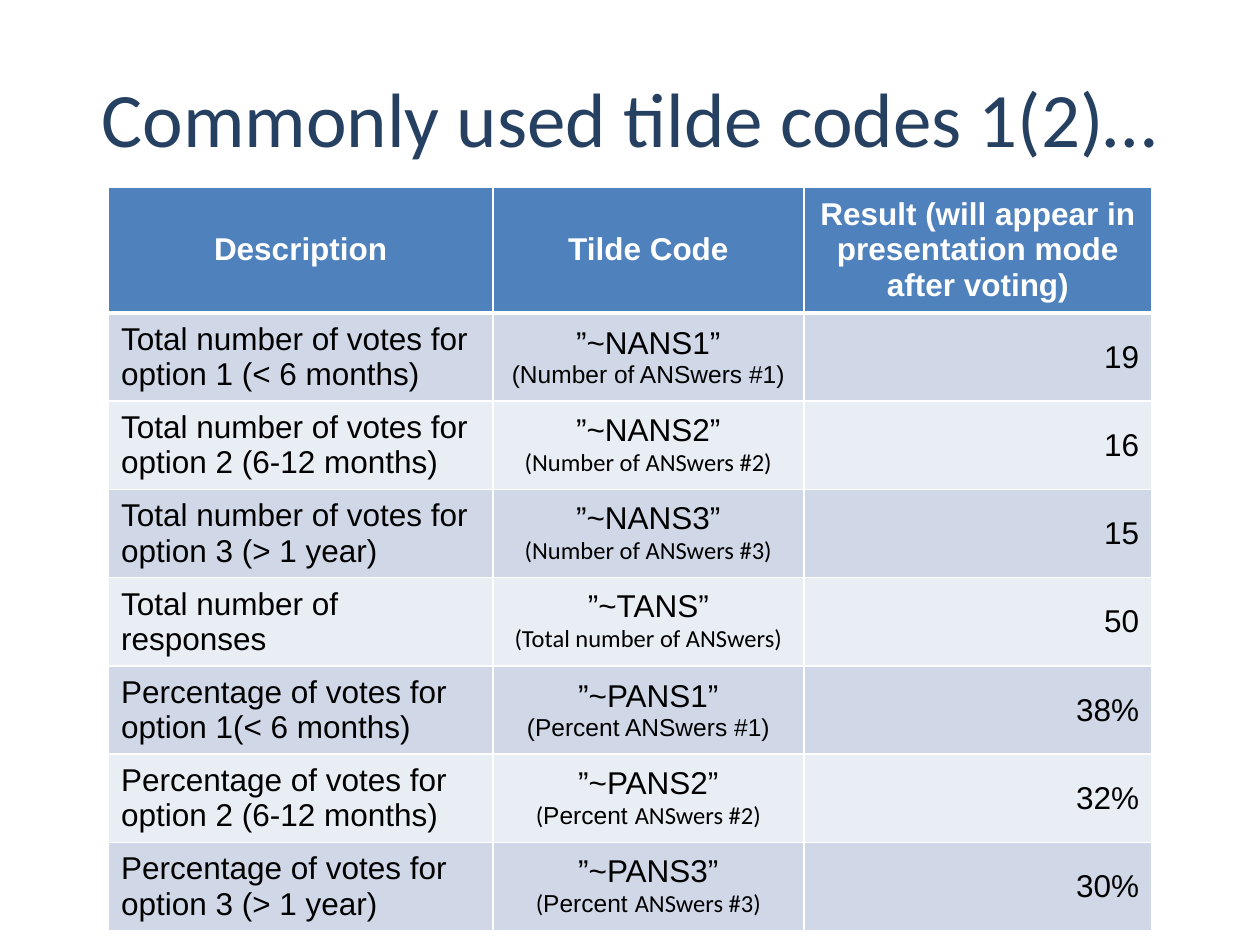
from dataclasses import dataclass

from lxml import etree
from pptx import Presentation
from pptx.dml.color import RGBColor
from pptx.enum.text import MSO_ANCHOR, PP_ALIGN
from pptx.oxml.ns import qn
from pptx.util import Pt

LEFT, CENTER, RIGHT = PP_ALIGN.LEFT, PP_ALIGN.CENTER, PP_ALIGN.RIGHT
MIDDLE = MSO_ANCHOR.MIDDLE


@dataclass(frozen=True)
class Theme:
    title_color: str = "254061"
    header_fill: str = "4F81BD"
    band_fills: tuple = ("D0D8E8", "E9EDF4")
    white: str = "FFFFFF"
    black: str = "000000"
    title_size: int = 44
    body_size: int = 18
    note_size: int = 14
    sans: str = "Arial"
    humanist: str = "Calibri"


THEME = Theme()
ARIAL, CALIBRI = THEME.sans, THEME.humanist

TITLE = "Commonly used tilde codes 1(2)…"
HEADERS = ["Description", "Tilde Code", "Result (will appear in presentation mode after voting)"]
# Description, code, explanation as (text, font) runs, result
ROWS = [
    ("Total number of votes for option 1 (< 6 months)", "”~NANS1”",
     [("(Number of ANSwers #1)", ARIAL)], "19"),
    ("Total number of votes for option 2 (6-12 months)", "”~NANS2”",
     [("(Number of ANSwers #2)", CALIBRI)], "16"),
    ("Total number of votes for option 3 (> 1 year)", "”~NANS3”",
     [("(Number of ANSwers #3)", CALIBRI)], "15"),
    ("Total number of responses", "”~TANS”",
     [("(Total number of ANSwers)", CALIBRI)], "50"),
    ("Percentage of votes for option 1(< 6 months)", "”~PANS1”",
     [("(Percent ANSwers #1)", ARIAL)], "38%"),
    ("Percentage of votes for option 2 (6-12 months)", "”~PANS2”",
     [("(", CALIBRI), ("Percent ", ARIAL), ("ANSwers #2)", CALIBRI)], "32%"),
    ("Percentage of votes for option 3 (> 1 year)", "”~PANS3”",
     [("(", CALIBRI), ("Percent ", ARIAL), ("ANSwers #3)", CALIBRI)], "30%"),
]
COLUMN_WIDTHS = [219.6, 177.84, 198.72]
ROW_HEIGHT, SHORT_ROW_HEIGHT = 50.4, 45.36
SHORT_ROW = 4


class SlideBuilder:
    """Holds the theme and the current slide, and adds elements to it."""

    def __init__(self, slide, theme):
        self.slide = slide
        self.theme = theme

    def fill_text(self, text_frame, paragraphs, alignment, color, bold=False):
        """Fill a frame; each paragraph is a list of (text, font name, size)."""
        for index, runs in enumerate(paragraphs):
            paragraph = text_frame.paragraphs[0] if index == 0 else text_frame.add_paragraph()
            paragraph.alignment = alignment
            for text, name, size in runs:
                run = paragraph.add_run()
                run.text = text
                for key, value in {"name": name, "size": Pt(size), "bold": bold}.items():
                    setattr(run.font, key, value)
                run.font.color.rgb = RGBColor.from_string(color)

    def title(self, text, left, top, width, height):
        shape = self.slide.shapes.add_textbox(Pt(left), Pt(top), Pt(width), Pt(height))
        frame = shape.text_frame
        frame.word_wrap = True
        frame.vertical_anchor = MIDDLE
        runs = [(text, self.theme.humanist, self.theme.title_size)]
        self.fill_text(frame, [runs], CENTER, self.theme.title_color)

    def borders(self, cell, top, bottom):
        properties = cell._tc.get_or_add_tcPr()
        sides = {"a:lnL": 1, "a:lnR": 1, "a:lnT": top, "a:lnB": bottom}
        for index, (tag, width) in enumerate(sides.items()):
            line = etree.Element(qn(tag), w=str(Pt(width)))
            fill = etree.SubElement(line, qn("a:solidFill"))
            etree.SubElement(fill, qn("a:srgbClr"), val=self.theme.white)
            properties.insert(index, line)

    def cell(self, cell, paragraphs, alignment, fill, color, bold=False, top=1, bottom=1):
        cell.vertical_anchor = MIDDLE
        cell.fill.solid()
        cell.fill.fore_color.rgb = RGBColor.from_string(fill)
        self.borders(cell, top, bottom)
        self.fill_text(cell.text_frame, paragraphs, alignment, color, bold)

    def table(self, headers, rows, left, top, widths, heights):
        theme = self.theme
        table = self.slide.shapes.add_table(
            len(heights), len(widths), Pt(left), Pt(top), Pt(sum(widths)), Pt(sum(heights))).table
        for column, width in zip(table.columns, widths):
            column.width = Pt(width)
        for row, height in zip(table.rows, heights):
            row.height = Pt(height)

        def body(text):
            return [(text, theme.sans, theme.body_size)]

        for index, header in enumerate(headers):
            self.cell(table.cell(0, index), [body(header)], CENTER,
                      theme.header_fill, theme.white, bold=True, bottom=3)
        for row_index, (description, code, note, result) in enumerate(rows, 1):
            note_runs = [(text, font, theme.note_size) for text, font in note]
            contents = [([body(description)], LEFT),
                        ([body(code), note_runs], CENTER),
                        ([body(result)], RIGHT)]
            fill = theme.band_fills[(row_index - 1) % 2]
            for column_index, (paragraphs, alignment) in enumerate(contents):
                self.cell(table.cell(row_index, column_index), paragraphs, alignment,
                          fill, theme.black, top=3 if row_index == 1 else 1)


def main():
    presentation = Presentation()
    presentation.slide_width, presentation.slide_height = Pt(720), Pt(540)
    slide = presentation.slides.add_slide(presentation.slide_layouts[6])
    builder = SlideBuilder(slide, THEME)
    builder.title(TITLE, 36, 21.6, 648, 90)
    heights = [SHORT_ROW_HEIGHT if index == SHORT_ROW else ROW_HEIGHT
               for index in range(len(ROWS) + 1)]
    builder.table(HEADERS, ROWS, 62, 106.8, COLUMN_WIDTHS, heights)
    presentation.save("out.pptx")


if __name__ == "__main__":
    main()
